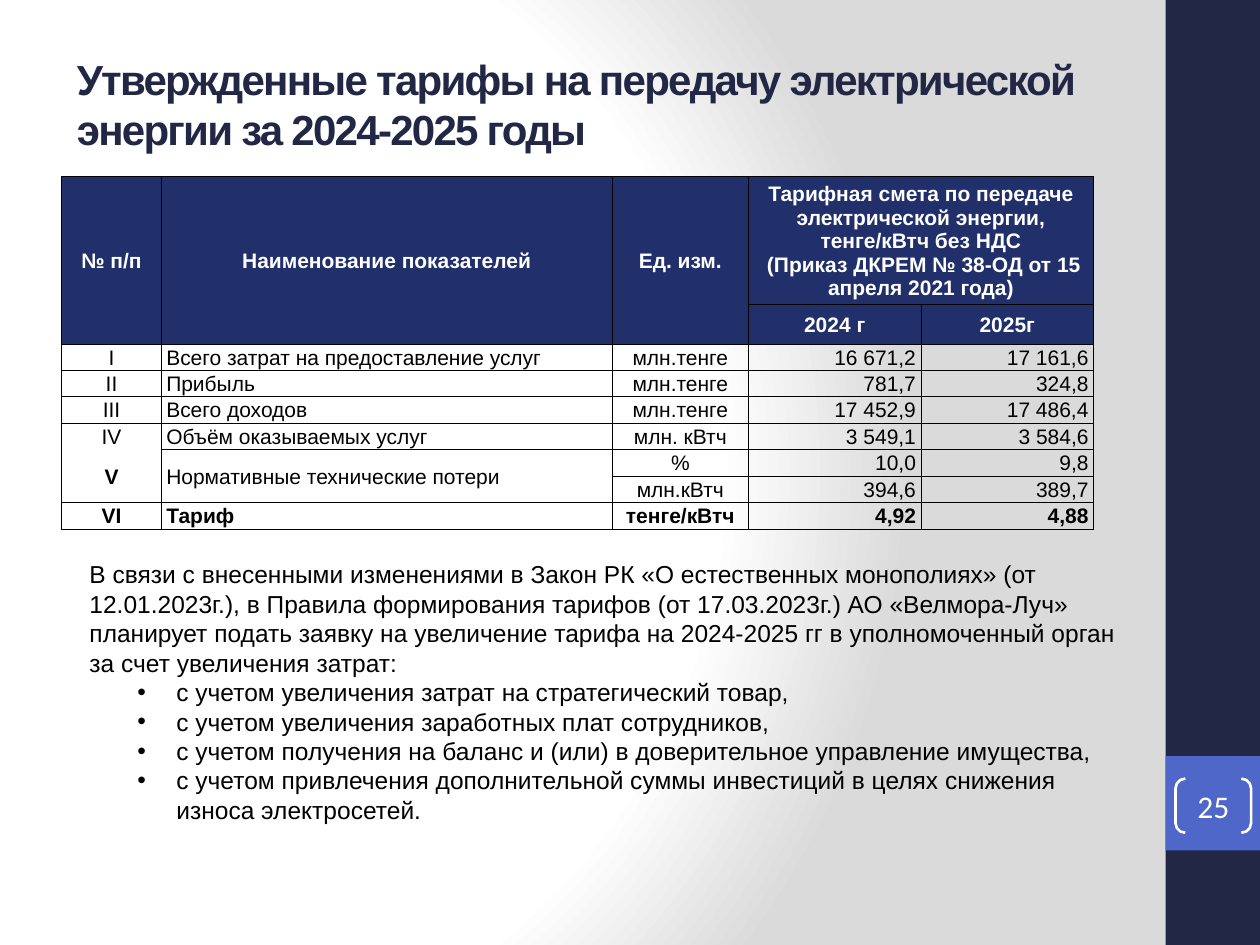
from lxml.etree import SubElement
from pptx import Presentation
from pptx.dml.color import RGBColor
from pptx.enum.shapes import MSO_SHAPE
from pptx.enum.text import MSO_ANCHOR, MSO_AUTO_SIZE, PP_ALIGN
from pptx.oxml import parse_xml
from pptx.oxml.ns import qn
from pptx.util import Inches, Pt

NAVY, BLUE, HEAD = "212745", "4E67C8", "21306A"
WHITE, BLACK = "FFFFFF", "000000"
LEFT, MID, RIGHT = PP_ALIGN.LEFT, PP_ALIGN.CENTER, PP_ALIGN.RIGHT
NS = "http://schemas.openxmlformats.org/drawingml/2006/main"

TITLE = "Утвержденные тарифы на передачу электрической энергии за 2024-2025 годы"
INTRO = (
    "В связи с внесенными изменениями в Закон РК «О естественных монополиях» "
    "(от 12.01.2023г.), в Правила формирования тарифов (от 17.03.2023г.) "
    "АО «Велмора-Луч» планирует подать заявку на увеличение тарифа на "
    "2024-2025 гг в уполномоченный орган за счет увеличения затрат:"
)
POINTS = [
    "с учетом увеличения затрат на стратегический товар,",
    "с учетом увеличения заработных плат сотрудников,",
    "с учетом получения на баланс и (или) в доверительное управление имущества,",
    "с учетом привлечения дополнительной суммы инвестиций в целях снижения "
    "износа электросетей.",
]
ORDER = (
    "Тарифная смета по передаче электрической энергии, тенге/кВтч без НДС\n"
    " (Приказ ДКРЕМ № 38-ОД от 15 апреля 2021 года)"
)
ROWS = [
    ["№ п/п", "Наименование показателей", "Ед. изм.", ORDER, ""],
    ["", "", "", "2024 г", "2025г"],
    ["I", "Всего затрат на предоставление услуг", "млн.тенге", "16 671,2", "17 161,6"],
    ["II", "Прибыль", "млн.тенге", "781,7", "324,8"],
    ["III", "Всего доходов", "млн.тенге", "17 452,9", "17 486,4"],
    ["IV", "Объём оказываемых услуг", "млн. кВтч", "3 549,1", "3 584,6"],
    ["V", "Нормативные технические потери", "%", "10,0", "9,8"],
    ["", "", "млн.кВтч", "394,6", "389,7"],
    ["VI", "Тариф", "тенге/кВтч", "4,92", "4,88"],
]
WIDTHS = [0.79, 3.58, 1.08, 1.37, 1.37]
HEIGHTS = [1.02, 0.31] + [0.21] * 7
SPANS = [(0, 0, 1, 0), (0, 1, 1, 1), (0, 2, 1, 2), (0, 3, 0, 4), (6, 0, 7, 0), (6, 1, 7, 1)]
ALIGNS = [MID, LEFT, MID, RIGHT, RIGHT]


def color(code):
    return RGBColor.from_string(code)


class Page:
    def __init__(self, deck, font="Arial"):
        self.slide = deck.slides.add_slide(deck.slide_layouts[1])
        self.font = font

    def place(self, shape, box):
        shape.left, shape.top, shape.width, shape.height = map(Inches, box)

    def style(self, para, size, code, bold=False, align=LEFT, font=None):
        para.alignment = align
        for run in para.runs:
            run.font.size = Pt(size)
            run.font.name = font or self.font
            run.font.bold = bold
            run.font.color.rgb = color(code)

    def back(self):
        fill = self.slide.background.fill
        fill.solid()
        stops = "".join(
            f'<a:gs pos="{pos}000"><a:srgbClr val="{code}"/></a:gs>'
            for pos, code in [(0, WHITE), (75, WHITE), (100, "DADADA")]
        )
        grad = parse_xml(
            f'<a:gradFill xmlns:a="{NS}" rotWithShape="1"><a:gsLst>{stops}</a:gsLst>'
            '<a:path path="circle"><a:fillToRect l="20000" t="50000" r="100000" '
            'b="50000"/></a:path></a:gradFill>'
        )
        props = self.slide.background._cSld.bg.bgPr
        props.replace(props.find(qn("a:solidFill")), grad)

    def block(self, box, code):
        shape = self.slide.shapes.add_shape(MSO_SHAPE.RECTANGLE, *map(Inches, box))
        shape.shadow.inherit = False
        shape.fill.solid()
        shape.fill.fore_color.rgb = color(code)
        shape.line.fill.background()

    def badge(self, box, text):
        shape = self.slide.shapes.add_shape(MSO_SHAPE.DOUBLE_BRACKET, *map(Inches, box))
        shape.shadow.inherit = False
        shape.adjustments[0] = 0.18
        shape.fill.background()
        shape.line.color.rgb = color(WHITE)
        shape.line.width = Pt(1.5)
        frame = shape.text_frame
        frame.text = text
        frame.vertical_anchor = MSO_ANCHOR.MIDDLE
        frame.margin_left = frame.margin_right = frame.margin_top = frame.margin_bottom = 0
        self.style(frame.paragraphs[0], 18, WHITE, align=MID, font="Calibri")

    def title(self, box, text):
        shape = self.slide.shapes.title
        self.place(shape, box)
        frame = shape.text_frame
        frame.text = text
        frame.auto_size = MSO_AUTO_SIZE.NONE
        frame.vertical_anchor = MSO_ANCHOR.MIDDLE
        para = frame.paragraphs[0]
        self.style(para, 24, NAVY, bold=True)
        para.runs[0].font._element.set("spc", "-100")

    def body(self, box, intro, points):
        shape = self.slide.placeholders[1]
        self.place(shape, box)
        frame = shape.text_frame
        frame.text = "\n".join([intro] + points)
        frame.auto_size = MSO_AUTO_SIZE.NONE
        for num, para in enumerate(frame.paragraphs):
            para.level = min(num, 1)
            self.style(para, 14, BLACK)
            para.space_before = Pt(0)
            props = para._p.get_or_add_pPr()
            props.set("marL", str(Inches(0.81 if num else 0.12)))
            props.set("indent", str(Inches(-0.31 if num else 0)))
            if num:
                SubElement(props, qn("a:buFont")).set("typeface", self.font)
                SubElement(props, qn("a:buChar")).set("char", "•")
            else:
                SubElement(props, qn("a:buNone"))

    def border(self, cell, hidden):
        props = cell._tc.get_or_add_tcPr()
        for num, side in enumerate(["lnL", "lnR", "lnT", "lnB"]):
            line = parse_xml(f'<a:{side} xmlns:a="{NS}" w="{Pt(0.5)}"/>')
            if side == hidden:
                SubElement(line, qn("a:noFill"))
            else:
                fill = SubElement(line, qn("a:solidFill"))
                SubElement(fill, qn("a:srgbClr")).set("val", BLACK)
            props.insert(num, line)

    def cell(self, cell, text, row, col):
        head = row < 2
        cell.text = text
        cell.vertical_anchor = MSO_ANCHOR.MIDDLE
        cell.margin_left = Inches(0.04 if not head and col == 1 else 0.01)
        cell.margin_right = Inches(0.04 if not head and col > 2 else 0.01)
        cell.margin_top, cell.margin_bottom = Inches(0.01), 0
        if head:
            cell.fill.solid()
            cell.fill.fore_color.rgb = color(HEAD)
        else:
            cell.fill.background()
        bold = head or row == 8 or text == "V"
        for para in cell.text_frame.paragraphs:
            self.style(para, 12, WHITE if head else BLACK, bold, MID if head else ALIGNS[col])
            if not text:
                para.font.size = Pt(12)
        self.border(cell, {(5, 0): "lnB", (6, 0): "lnT"}.get((row, col)))

    def table(self, left, top):
        box = (left, top, sum(WIDTHS), sum(HEIGHTS))
        grid = self.slide.shapes.add_table(len(ROWS), len(WIDTHS), *map(Inches, box)).table
        grid.first_row = grid.horz_banding = False
        for col, width in zip(grid.columns, WIDTHS):
            col.width = Inches(width)
        for row, height in zip(grid.rows, HEIGHTS):
            row.height = Inches(height)
        for row, texts in enumerate(ROWS):
            for col, text in enumerate(texts):
                self.cell(grid.cell(row, col), text, row, col)
        for top, left, low, right in SPANS:
            grid.cell(top, left).merge(grid.cell(low, right))


def main():
    deck = Presentation()
    deck.slide_width, deck.slide_height = Inches(10), Inches(7.5)
    page = Page(deck)
    page.back()
    page.block((9.25, 0, 0.75, 7.5), NAVY)
    page.block((9.25, 6, 0.75, 0.75), BLUE)
    page.badge((9.33, 6.18, 0.6, 0.43), "25")
    page.title((0.51, 0.44, 8.35, 0.77), TITLE)
    page.body((0.49, 4.39, 8.61, 2.5), INTRO, POINTS)
    page.table(0.49, 1.4)
    deck.save("out.pptx")


if __name__ == "__main__":
    main()
